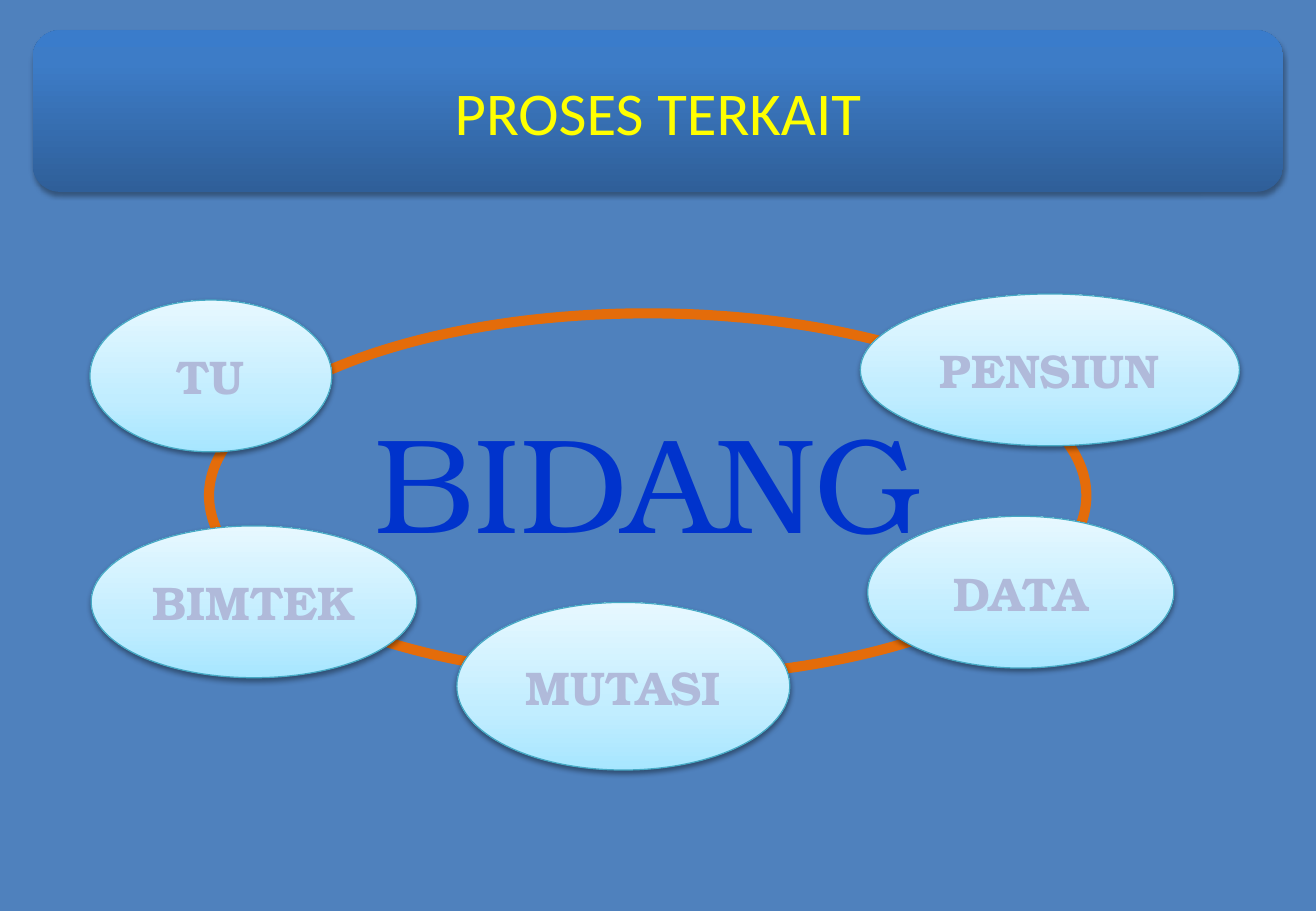
from dataclasses import dataclass

from lxml.etree import SubElement
from pptx import Presentation
from pptx.dml.color import RGBColor as Rgb
from pptx.enum.shapes import MSO_SHAPE as Preset
from pptx.enum.text import MSO_ANCHOR as Anchor, MSO_AUTO_SIZE as AutoSize, PP_ALIGN as Align
from pptx.oxml.ns import qn
from pptx.shapes.autoshape import Shape
from pptx.slide import Slide
from pptx.text.text import TextFrame
from pptx.util import Emu, Pt

EMU_PER_PX = 9144  # 100 px to the inch

Stops = tuple[tuple[int, str], ...]


@dataclass(frozen=True)
class Theme:
    background: str = "4F81BD"
    banner: Stops = ((0, "2F5F99"), (80, "3D7CC7"), (100, "3A7CCB"))
    bubble: Stops = ((0, "A7E6FF"), (35, "C1EDFF"), (100, "E7F8FF"))
    bubble_line: str = "46AAC5"
    bubble_text: str = "B0BADA"
    ring: str = "E46C0A"
    title_text: str = "FFFF00"
    center_text: str = "0033CC"
    shadow: str = "000000"
    title_font: str = "Calibri"
    body_font: str = "TeX Gyre Bonum"
    title_size: int = 36
    center_size: int = 80
    bubble_size: int = 28


@dataclass(frozen=True)
class Box:
    left: int
    top: int
    width: int
    height: int

    def emu(self) -> tuple[Emu, ...]:
        return tuple(Emu(px * EMU_PER_PX)
                     for px in (self.left, self.top, self.width, self.height))


@dataclass(frozen=True)
class Bubble:
    label: str
    box: Box


THEME = Theme()
LOWER_BUBBLES = (
    Bubble("BIMTEK", Box(75, 433, 268, 125)),
    Bubble("MUTASI", Box(376, 496, 274, 138)),
    Bubble("DATA", Box(714, 425, 252, 125)),
)
UPPER_BUBBLES = (
    Bubble("TU", Box(74, 247, 199, 125)),
    Bubble("PENSIUN", Box(708, 242, 312, 125)),
)


def add_color(parent, color: str):
    return SubElement(parent, qn("a:srgbClr"), val=color)


def fill_gradient(shape: Shape, stops: Stops) -> None:
    """Fill from bottom to top."""
    shape.fill.gradient()
    shape.fill.gradient_angle = 90
    stop_list = shape.element.spPr.find(".//" + qn("a:gsLst"))
    for old_stop in list(stop_list):
        stop_list.remove(old_stop)
    for percent, color in stops:
        add_color(SubElement(stop_list, qn("a:gs"), pos=str(percent * 1000)), color)


def add_shadow(shape: Shape, distance: float, opacity: int) -> None:
    shape.shadow.inherit = False
    effects = shape.element.spPr.find(qn("a:effectLst"))
    shadow = SubElement(effects, qn("a:outerShdw"), blurRad=str(Pt(3.1)),
                        dist=str(Pt(distance)), dir="5400000", rotWithShape="0")
    SubElement(add_color(shadow, THEME.shadow), qn("a:alpha"), val=str(opacity * 1000))


def set_line(shape: Shape, color: str, width: float) -> None:
    shape.line.color.rgb = Rgb.from_string(color)
    shape.line.width = Pt(width)


def write(frame: TextFrame, text: str, font: str, size: int, color: str,
          bold: bool = False) -> None:
    para = frame.paragraphs[0]
    para.text = text
    para.alignment = Align.CENTER
    para.font.name = font
    para.font.size = Pt(size)
    para.font.bold = bold
    para.font.color.rgb = Rgb.from_string(color)


def add_banner(page: Slide, title: str, box: Box) -> None:
    shape = page.shapes.add_shape(Preset.ROUNDED_RECTANGLE, *box.emu())
    fill_gradient(shape, THEME.banner)
    shape.line.fill.background()
    add_shadow(shape, distance=1.8, opacity=35)
    shape.text_frame.vertical_anchor = Anchor.MIDDLE
    write(shape.text_frame, title, THEME.title_font, THEME.title_size, THEME.title_text)


def add_ring(page: Slide, box: Box) -> None:
    shape = page.shapes.add_shape(Preset.OVAL, *box.emu())
    shape.fill.background()
    set_line(shape, THEME.ring, 6)
    shape.shadow.inherit = False


def add_bubble(page: Slide, bubble: Bubble) -> None:
    shape = page.shapes.add_shape(Preset.OVAL, *bubble.box.emu())
    fill_gradient(shape, THEME.bubble)
    set_line(shape, THEME.bubble_line, 0.75)
    add_shadow(shape, distance=1.6, opacity=38)
    shape.text_frame.vertical_anchor = Anchor.MIDDLE
    write(shape.text_frame, bubble.label, THEME.body_font, THEME.bubble_size,
          THEME.bubble_text, bold=True)


def add_center_word(page: Slide, word: str, box: Box) -> None:
    frame = page.shapes.add_textbox(*box.emu()).text_frame
    frame.word_wrap = False
    frame.auto_size = AutoSize.SHAPE_TO_FIT_TEXT
    write(frame, word, THEME.body_font, THEME.center_size, THEME.center_text)


def main() -> None:
    deck = Presentation()
    deck.slide_width = Emu(1083 * EMU_PER_PX)
    deck.slide_height = Emu(750 * EMU_PER_PX)
    page = deck.slides.add_slide(deck.slide_layouts[6])
    page.background.fill.solid()
    page.background.fill.fore_color.rgb = Rgb.from_string(THEME.background)

    # Title banner
    add_banner(page, "PROSES TERKAIT", Box(27, 25, 1029, 133))

    # Ring of divisions around the center word
    add_ring(page, Box(172, 258, 722, 300))
    for bubble in LOWER_BUBBLES:
        add_bubble(page, bubble)
    add_center_word(page, "BIDANG", Box(281, 323, 506, 145))
    for bubble in UPPER_BUBBLES:
        add_bubble(page, bubble)

    deck.save("out.pptx")


if __name__ == "__main__":
    main()
